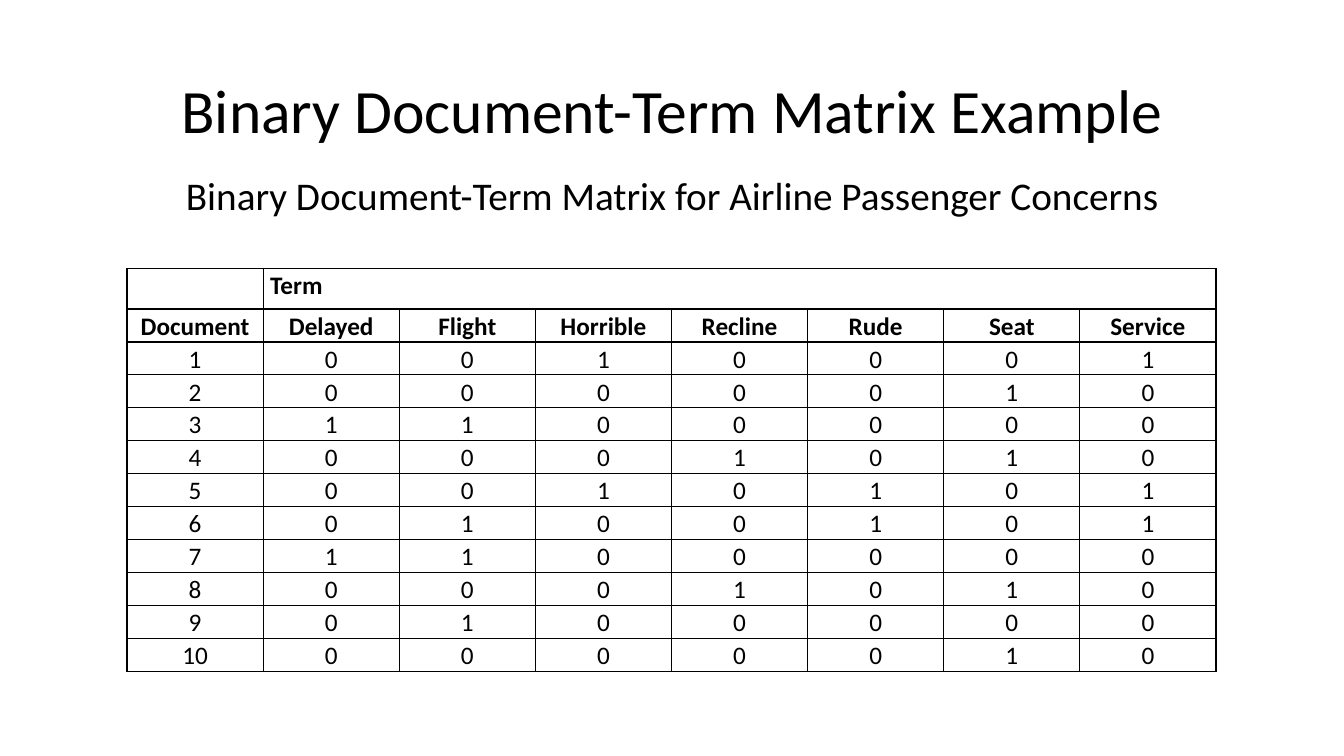
import dataclasses

import lxml.etree
import pptx
import pptx.dml.color
import pptx.enum.text
import pptx.oxml.ns
import pptx.util

Inches = pptx.util.Inches
CENTER = pptx.enum.text.PP_ALIGN.CENTER
LEFT = pptx.enum.text.PP_ALIGN.LEFT

TERMS = ["Delayed", "Flight", "Horrible", "Recline", "Rude", "Seat", "Service"]
OCCURRENCES = [
    "0010001",
    "0000010",
    "1100000",
    "0001010",
    "0010101",
    "0100101",
    "1100000",
    "0001010",
    "0100000",
    "0000010",
]


@dataclasses.dataclass(frozen=True)
class Theme:
    font: str = "Calibri"
    ink: str = "000000"
    title_size: int = 44
    subtitle_size: int = 28
    table_size: int = 18
    border_width: float = 1


class SlideBuilder:
    def __init__(self, slide, theme):
        self.slide = slide
        self.theme = theme

    def add_text(self, paragraph, text, size, bold=False, alignment=CENTER, spacing=None):
        paragraph.alignment = alignment
        paragraph.line_spacing = spacing
        run = paragraph.add_run()
        run.text = text
        run.font.name = self.theme.font
        run.font.size = pptx.util.Pt(size)
        run.font.bold = bold
        run.font.color.rgb = pptx.dml.color.RGBColor.from_string(self.theme.ink)

    def title(self, text, left, top, width, height):
        shape = self.slide.shapes.title
        shape.left, shape.top = Inches(left), Inches(top)
        shape.width, shape.height = Inches(width), Inches(height)
        frame = shape.text_frame
        frame.vertical_anchor = pptx.enum.text.MSO_ANCHOR.MIDDLE
        self.add_text(frame.paragraphs[0], text, self.theme.title_size, spacing=0.9)

    def subtitle(self, text, left, top, width, height):
        shape = self.slide.shapes.add_textbox(
            Inches(left), Inches(top), Inches(width), Inches(height))
        frame = shape.text_frame
        frame.word_wrap = True
        frame.auto_size = pptx.enum.text.MSO_AUTO_SIZE.SHAPE_TO_FIT_TEXT
        self.add_text(frame.paragraphs[0], text, self.theme.subtitle_size)

    def borders(self, cell, hidden_sides):
        properties = cell._tc.get_or_add_tcPr()
        for side in "LRTB":
            line = lxml.etree.SubElement(
                properties, pptx.oxml.ns.qn(f"a:ln{side}"),
                w=str(pptx.util.Pt(self.theme.border_width)))
            if side in hidden_sides:
                lxml.etree.SubElement(line, pptx.oxml.ns.qn("a:noFill"))
            else:
                fill = lxml.etree.SubElement(line, pptx.oxml.ns.qn("a:solidFill"))
                lxml.etree.SubElement(
                    fill, pptx.oxml.ns.qn("a:srgbClr"), val=self.theme.ink)

    def matrix(self, rows, left, top, column_width, heading_height, row_height):
        columns = len(rows[0])
        height = heading_height + row_height * (len(rows) - 1)
        table = self.slide.shapes.add_table(
            len(rows), columns, Inches(left), Inches(top),
            Inches(column_width * columns), Inches(height)).table
        table.first_row = False
        table.horz_banding = False
        for row_index, values in enumerate(rows):
            is_heading = row_index == 0
            table.rows[row_index].height = Inches(
                heading_height if is_heading else row_height)
            for column_index, value in enumerate(values):
                cell = table.cell(row_index, column_index)
                hidden_sides = ""
                if is_heading and column_index > 0:
                    hidden_sides += "L" if column_index > 1 else ""
                    hidden_sides += "R" if column_index < columns - 1 else ""
                self.borders(cell, hidden_sides)
                cell.fill.background()
                if value:
                    cell.margin_left = cell.margin_right = Inches(0.07)
                    cell.margin_top = cell.margin_bottom = 0
                    self.add_text(
                        cell.text_frame.paragraphs[0], value, self.theme.table_size,
                        bold=row_index < 2,
                        alignment=LEFT if is_heading else CENTER, spacing=1.07)


def main():
    presentation = pptx.Presentation()
    presentation.slide_width = Inches(13.33)
    presentation.slide_height = Inches(7.5)
    slide = presentation.slides.add_slide(presentation.slide_layouts[5])
    builder = SlideBuilder(slide, Theme())

    builder.title("Binary Document-Term Matrix Example", 0.92, 0.4, 11.5, 1.45)
    rows = [["", "Term"] + [""] * (len(TERMS) - 1), ["Document"] + TERMS]
    rows += [[str(number), *flags] for number, flags in enumerate(OCCURRENCES, start=1)]
    builder.matrix(rows, 1.26, 2.66, 1.35, 0.31, 0.28)
    builder.subtitle(
        "Binary Document-Term Matrix for Airline Passenger Concerns", 0, 1.65, 13.33, 0.57)

    presentation.save("out.pptx")


if __name__ == "__main__":
    main()
